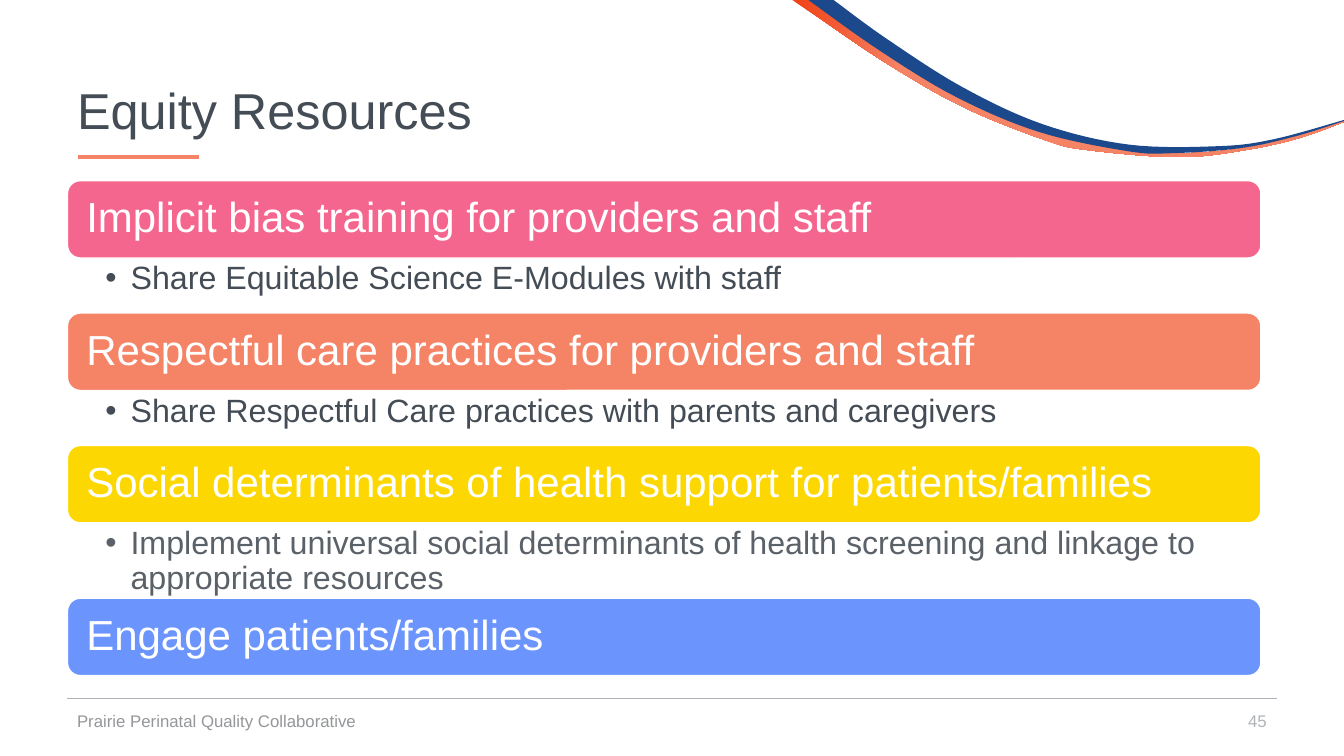
from dataclasses import dataclass, field

from lxml import etree
from pptx import Presentation
from pptx import util as u
from pptx.dml import color
from pptx.enum import shapes, text
from pptx.oxml import ns

Point = tuple[float, float]

COLOURS = {
    "ink": "444C55", "soft ink": "5B6168", "footer": "949699", "rule": "AFB3B9",
    "white": "FFFFFF", "pink": "F5668F", "coral": "F58366", "yellow": "FDD702",
    "blue": "6B95FD", "navy": "1C498B", "flame": "F04115",
}
FONT = "Arial"
LEFT, TOP, WIDTH = 48.2, 129, 852.5
BAR_HEIGHT = 55.3
CURVE_STEPS = 8


@dataclass
class Ribbon:
    """A swoosh between an upper edge, left to right, and a lower edge, right to left."""
    upper: list[Point]
    lower: list[Point]
    colours: list[str]


@dataclass
class Topic:
    heading: str
    colour: str
    detail: str = ""
    detail_colour: str = "ink"
    detail_height: float = 39.3


@dataclass
class Label:
    wording: str
    place: tuple[float, float, float, float]
    size: float
    colour: str
    frame: dict = field(default_factory=dict)
    para: dict = field(default_factory=dict)


@dataclass
class Rule:
    start: Point
    end: Point
    colour: str
    weight: float


RIBBONS = [
    Ribbon(
        [(579.6, 0), (635, 38.9), (689.8, 71.3), (748.1, 95.8), (810, 108),
         (848.9, 109.4), (888.5, 105.8), (923.8, 97.9), (960, 86.4)],
        [(960, 87.1), (928.1, 98.6), (889.2, 107.3), (841.7, 112.3), (777.6, 107.3),
         (746.6, 100.1), (687.6, 76.3), (632.2, 44.6), (578.9, 8.6), (565.9, 0)],
        ["flame", "coral"]),
    Ribbon(
        [(595.4, 0), (632.9, 27.4), (686.9, 61.9), (744.5, 88.6), (806.4, 103.3),
         (870.5, 104.4), (910.1, 99.4), (960, 85.7)],
        [(960, 86.4), (925.9, 97.2), (886.3, 105.8), (838.1, 109.4), (805.7, 108),
         (742.3, 94.3), (682.6, 69.1), (627.1, 35.3), (577.4, 0)],
        ["navy"]),
]
RULES = [
    Rule((48, 499), (912, 499), "rule", 0.5),
    Rule((55.6, 112), (142, 112), "coral", 2.5),
]
LABELS = [
    Label("Equity Resources", (48, 28.8, 864, 104.4), 36, "ink", para={"line_spacing": 0.9}),
    Label("45", (696, 500.6, 216, 28.8), 12, "rule",
          para={"alignment": text.PP_ALIGN.RIGHT}),
    Label("Prairie Perinatal Quality Collaborative", (48, 500.6, 324, 28.8), 12, "footer"),
]
TOPICS = [
    Topic("Implicit bias training for providers and staff", "pink",
          "Share Equitable Science E-Modules with staff"),
    Topic("Respectful care practices for providers and staff", "coral",
          "Share Respectful Care practices with parents and caregivers"),
    Topic("Social determinants of health support for patients/families", "yellow",
          "Implement universal social determinants of health screening "
          "and linkage to appropriate resources", "soft ink", 53.8),
    Topic("Engage patients/families", "blue"),
]
HEADING_FRAME = {"margin_left": u.Pt(10.8), "margin_right": u.Pt(10.8)}
DETAIL_FRAME = {
    "margin_left": u.Pt(27.1), "margin_right": u.Pt(16.4),
    "margin_top": u.Pt(2.9), "margin_bottom": u.Pt(2.9),
    "vertical_anchor": text.MSO_ANCHOR.TOP,
}


def rgb(name: str) -> color.RGBColor:
    return color.RGBColor.from_string(COLOURS[name])


def apply(target, values: dict) -> None:
    for name, value in values.items():
        setattr(target, name, value)


def write(box, wording: str, size: float, colour: str, frame: dict, para: dict):
    """Fill a box with one formatted paragraph and return that paragraph."""
    apply(box.text_frame, {"word_wrap": True,
                           "vertical_anchor": text.MSO_ANCHOR.MIDDLE, **frame})
    paragraph = box.text_frame.paragraphs[0]
    apply(paragraph, {"alignment": text.PP_ALIGN.LEFT, **para})
    span = paragraph.add_run()
    span.text = wording
    apply(span.font, {"name": FONT, "size": u.Pt(size)})
    span.font.color.rgb = rgb(colour)
    return paragraph


def add_label(page, label: Label):
    box = page.shapes.add_textbox(*map(u.Pt, label.place))
    return write(box, label.wording, label.size, label.colour, label.frame, label.para)


def add_bullet(paragraph) -> None:
    properties = paragraph._p.get_or_add_pPr()
    properties.set("marL", str(u.Pt(18)))
    properties.set("indent", str(u.Pt(-18)))
    etree.SubElement(properties, ns.qn("a:buFont")).set("typeface", FONT)
    etree.SubElement(properties, ns.qn("a:buChar")).set("char", "•")


def smooth(anchors: list[Point]) -> list[Point]:
    """Sample a Catmull-Rom curve through the anchors."""
    padded = [anchors[0], *anchors, anchors[-1]]
    points = []
    for a, b, c, d in zip(padded, padded[1:], padded[2:], padded[3:]):
        for step in range(CURVE_STEPS):
            t = step / CURVE_STEPS
            points.append(tuple(
                q + t / 2 * (r - p + t * (2 * p - 5 * q + 4 * r - s
                                          + t * (3 * q - p - 3 * r + s)))
                for p, q, r, s in zip(a, b, c, d)))
    return [*points, anchors[-1]]


def add_ribbon(page, ribbon: Ribbon) -> None:
    outline = [(u.Pt(x), u.Pt(y)) for x, y in smooth(ribbon.upper) + smooth(ribbon.lower)]
    builder = page.shapes.build_freeform(*outline[0])
    builder.add_line_segments(outline[1:], close=True)
    swoosh = builder.convert_to_shape()
    swoosh.shadow.inherit = False
    swoosh.line.fill.background()
    if len(ribbon.colours) == 1:
        swoosh.fill.solid()
        swoosh.fill.fore_color.rgb = rgb(ribbon.colours[0])
        return
    swoosh.fill.gradient()
    swoosh.fill.gradient_angle = 0
    for stop, name, position in zip(swoosh.fill.gradient_stops, ribbon.colours, (0, 0.2)):
        stop.position = position
        stop.color.rgb = rgb(name)


def add_rule(page, rule: Rule) -> None:
    line = page.shapes.add_connector(
        shapes.MSO_CONNECTOR.STRAIGHT, *map(u.Pt, rule.start + rule.end))
    line.line.color.rgb = rgb(rule.colour)
    line.line.width = u.Pt(rule.weight)
    etree.SubElement(line._element.spPr, ns.qn("a:effectLst"))


def add_topic(page, topic: Topic, top: float) -> float:
    """Draw a heading bar with its detail and return where the next topic starts."""
    bar = page.shapes.add_shape(shapes.MSO_SHAPE.ROUNDED_RECTANGLE,
                                *map(u.Pt, (LEFT, top, WIDTH, BAR_HEIGHT)))
    bar.shadow.inherit = False
    bar.fill.solid()
    bar.fill.fore_color.rgb = rgb(topic.colour)
    bar.line.color.rgb = rgb("white")
    bar.line.width = u.Pt(1)
    write(bar, topic.heading, 30, "white", HEADING_FRAME, {"line_spacing": 0.9})
    bottom = top + BAR_HEIGHT
    if topic.detail:
        place = (LEFT, bottom, WIDTH, topic.detail_height)
        add_bullet(add_label(page, Label(topic.detail, place, 23, topic.detail_colour,
                                         DETAIL_FRAME, {"line_spacing": 0.9})))
    return bottom + topic.detail_height


def main() -> None:
    deck = Presentation()
    apply(deck, {"slide_width": u.Pt(960), "slide_height": u.Pt(540)})
    page = deck.slides.add_slide(deck.slide_layouts[6])
    for ribbon in RIBBONS:
        add_ribbon(page, ribbon)
    for rule in RULES:
        add_rule(page, rule)
    for label in LABELS:
        add_label(page, label)
    top = TOP
    for topic in TOPICS:
        top = add_topic(page, topic, top)
    deck.save("out.pptx")


if __name__ == "__main__":
    main()
